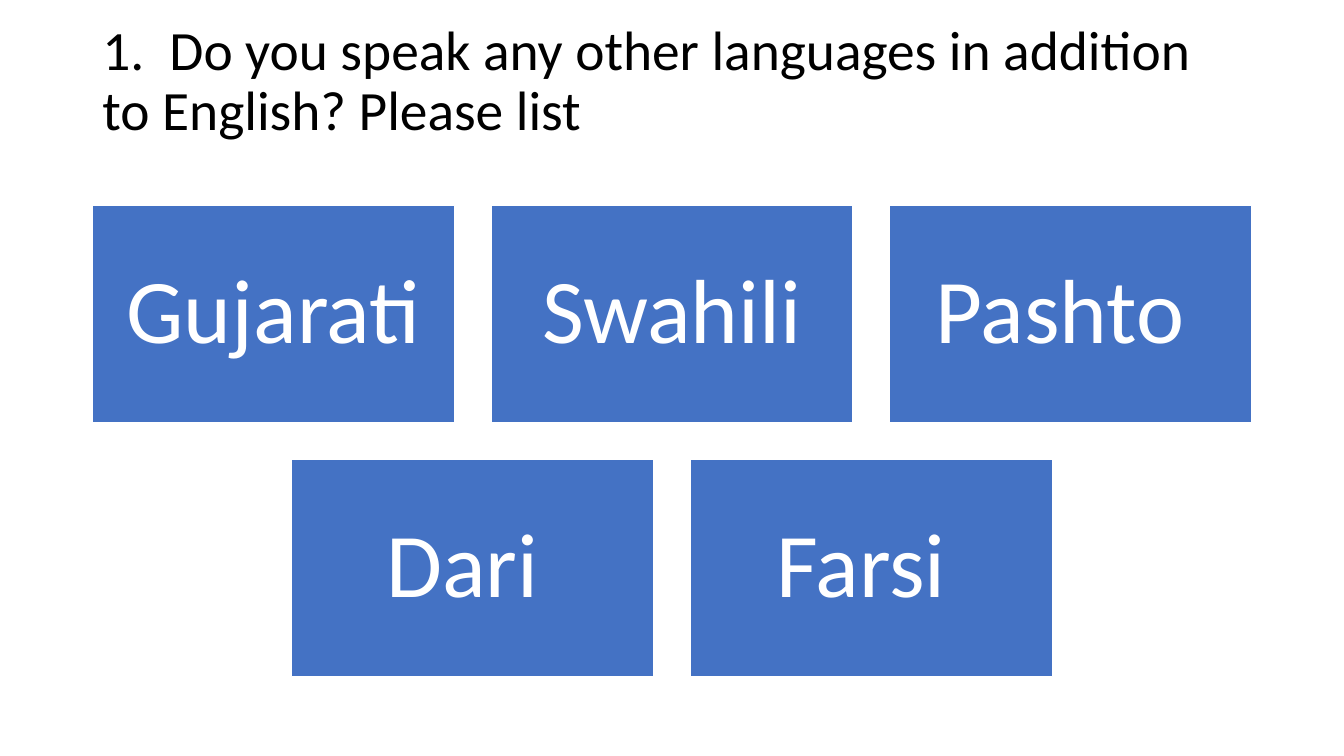
"""Build a slide that asks which languages a person speaks and shows five answers."""
from dataclasses import dataclass

from pptx import Presentation
from pptx.dml.color import RGBColor
from pptx.enum.shapes import MSO_SHAPE
from pptx.enum.text import MSO_ANCHOR, PP_ALIGN
from pptx.slide import Slide
from pptx.text.text import TextFrame
from pptx.util import Cm, Pt

SLIDE_WIDTH, SLIDE_HEIGHT = 33.87, 19.05
CARD_WIDTH, CARD_HEIGHT, CARD_GAP = 9.13, 5.48, 0.91
CARDS_TOP = 5.18
CARD_INSET = 0.69
QUESTION = "1.  Do you speak any other languages in addition to English? Please list"
LANGUAGE_ROWS = [["Gujarati ", "Swahili", "Pashto "], ["Dari ", "Farsi "]]


@dataclass
class LanguageCard:
    language: str
    left: float
    top: float


def color(value: str) -> RGBColor:
    return RGBColor.from_string(value)


def write(frame: TextFrame, wording: str, size: float, ink: str, align: PP_ALIGN) -> None:
    frame.text = wording
    frame.word_wrap = True
    frame.vertical_anchor = MSO_ANCHOR.MIDDLE
    paragraph = frame.paragraphs[0]
    paragraph.alignment = align
    paragraph.line_spacing = 0.9
    for run in paragraph.runs:
        run.font.name = "Calibri"
        run.font.size = Pt(size)
        run.font.color.rgb = color(ink)


def draw_question(slide: Slide) -> None:
    question = slide.shapes.add_textbox(Cm(2.33), Cm(1.01), Cm(29.21), Cm(3.68))
    question.text_frame.margin_bottom = Cm(1.65)
    write(question.text_frame, QUESTION, 39.6, "000000", PP_ALIGN.LEFT)


def lay_out_cards(rows: list[list[str]]) -> list[LanguageCard]:
    cards = []
    for row_index, languages in enumerate(rows):
        row_width = len(languages) * (CARD_WIDTH + CARD_GAP) - CARD_GAP
        row_left = (SLIDE_WIDTH - row_width) / 2
        top = CARDS_TOP + row_index * (CARD_HEIGHT + CARD_GAP)
        for column, language in enumerate(languages):
            left = row_left + column * (CARD_WIDTH + CARD_GAP)
            cards.append(LanguageCard(language, left, top))
    return cards


def draw_card(slide: Slide, card: LanguageCard) -> None:
    tile = slide.shapes.add_shape(
        MSO_SHAPE.RECTANGLE, Cm(card.left), Cm(card.top), Cm(CARD_WIDTH), Cm(CARD_HEIGHT)
    )
    tile.shadow.inherit = False
    tile.fill.solid()
    tile.fill.fore_color.rgb = color("4472C4")
    tile.line.color.rgb = color("FFFFFF")
    tile.line.width = Pt(1)
    frame = tile.text_frame
    frame.margin_left = frame.margin_right = Cm(CARD_INSET)
    frame.margin_top = frame.margin_bottom = Cm(CARD_INSET)
    write(frame, card.language, 65, "FFFFFF", PP_ALIGN.CENTER)


def main() -> None:
    presentation = Presentation()
    presentation.slide_width = Cm(SLIDE_WIDTH)
    presentation.slide_height = Cm(SLIDE_HEIGHT)
    slide = presentation.slides.add_slide(presentation.slide_layouts[6])
    draw_question(slide)
    for card in lay_out_cards(LANGUAGE_ROWS):
        draw_card(slide, card)
    presentation.save("out.pptx")


if __name__ == "__main__":
    main()
